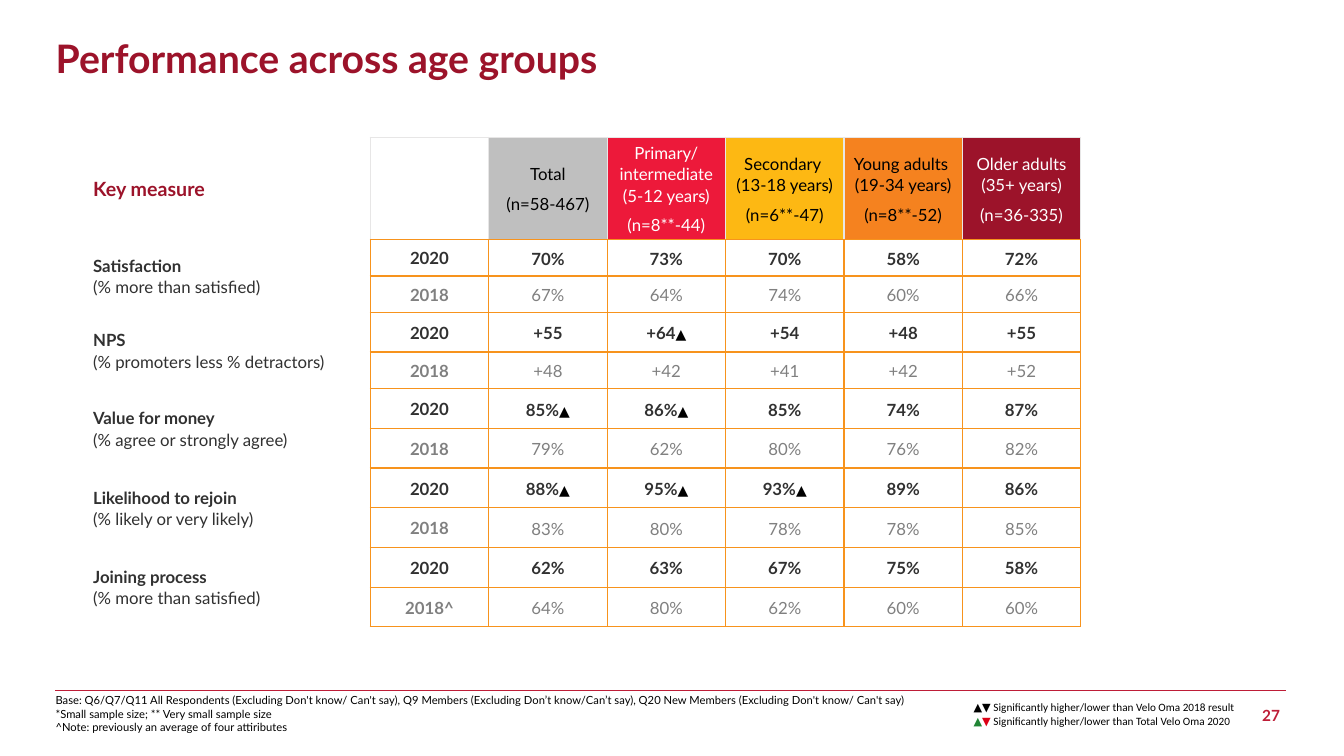
from copy import deepcopy
from dataclasses import dataclass
from typing import Optional

from lxml import etree
from pptx import Presentation
from pptx.dml.color import RGBColor
from pptx.enum.shapes import MSO_CONNECTOR, MSO_SHAPE
from pptx.enum.text import MSO_ANCHOR, PP_ALIGN
from pptx.oxml.ns import qn
from pptx.util import Pt

LEFT, CENTER, RIGHT = PP_ALIGN.LEFT, PP_ALIGN.CENTER, PP_ALIGN.RIGHT
MIDDLE, BOTTOM = MSO_ANCHOR.MIDDLE, MSO_ANCHOR.BOTTOM
LINE, RECT = MSO_CONNECTOR.STRAIGHT, MSO_SHAPE.RECTANGLE

BLACK = RGBColor(0x00, 0x00, 0x00)
WHITE = RGBColor(0xFF, 0xFF, 0xFF)
DARK = RGBColor(0x31, 0x31, 0x31)
GRAY = RGBColor(0x80, 0x80, 0x80)
SILVER = RGBColor(0xBF, 0xBF, 0xBF)
PALE = RGBColor(0xE7, 0xE6, 0xE6)
WINE = RGBColor(0x9C, 0x13, 0x2A)
RED = RGBColor(0xED, 0x19, 0x3A)
ROSE = RGBColor(0xBE, 0x1D, 0x37)
GOLD = RGBColor(0xFD, 0xB8, 0x13)
AMBER = RGBColor(0xF5, 0x82, 0x1F)
ORANGE = RGBColor(0xF7, 0x93, 0x1D)
GREEN = RGBColor(0x21, 0x85, 0x35)
SCARLET = RGBColor(0xDC, 0x00, 0x15)


@dataclass
class Span:
    text: str
    color: Optional[RGBColor] = None
    bold: Optional[bool] = None
    size: Optional[float] = None


@dataclass
class Group:
    name: str
    base: str
    fill: RGBColor
    color: RGBColor


@dataclass
class Measure:
    name: str
    note: str
    now: list[str]
    past: list[str]
    mark: str = ""


GROUPS = [
    Group("Total", "(n=58-467)", SILVER, BLACK),
    Group("Primary/ intermediate\n(5-12 years)", "(n=8**-44)", RED, WHITE),
    Group("Secondary \n(13-18 years)", "(n=6**-47)", GOLD, BLACK),
    Group("Young adults \n(19-34 years)", "(n=8**-52)", AMBER, BLACK),
    Group("Older adults\n(35+ years)", "(n=36-335)", WINE, WHITE),
]
MEASURES = [
    Measure("Satisfaction", "(% more than satisfied)",
            ["70%", "73%", "70%", "58%", "72%"], ["67%", "64%", "74%", "60%", "66%"]),
    Measure("NPS", "(% promoters less % detractors)",
            ["+55", "+64▲", "+54", "+48", "+55"], ["+48", "+42", "+41", "+42", "+52"]),
    Measure("Value for money", "(% agree or strongly agree)",
            ["85%▲", "86%▲", "85%", "74%", "87%"], ["79%", "62%", "80%", "76%", "82%"]),
    Measure("Likelihood to rejoin", "(% likely or very likely)",
            ["88%▲", "95%▲", "93%▲", "89%", "86%"], ["83%", "80%", "78%", "78%", "85%"]),
    Measure("Joining process", "(% more than satisfied)",
            ["62%", "63%", "67%", "75%", "58%"], ["64%", "80%", "62%", "60%", "60%"], "^"),
]
HEAD = 72.8
ROWS = [26.1, 26.1, 28.3, 26.1] + [28.4] * 6


def write(frame, paras: list[list[Span]], size: float = 12, color: RGBColor = BLACK,
          bold: bool = False, font: str = "Lato", align=LEFT,
          space: float = 1, gap: float = 0) -> None:
    """Fill a text frame, one list of spans for each paragraph."""
    for i, spans in enumerate(paras):
        para = frame.paragraphs[0] if i == 0 else frame.add_paragraph()
        para.alignment, para.line_spacing = align, space
        para.space_before = Pt(gap if i else 0)
        for span in spans:
            for j, part in enumerate(span.text.split("\n")):
                if j:
                    para.add_line_break()
                    para._p[-1].append(deepcopy(run._r.rPr))
                if not part:
                    continue
                run = para.add_run()
                run.text = part
                run.font.name = font
                run.font.size = Pt(span.size or size)
                run.font.bold = bold if span.bold is None else span.bold
                run.font.color.rgb = span.color or color


def edge(cell, **sides: Optional[RGBColor]) -> None:
    """Set the borders of a cell; a side left out has no line."""
    props = cell._tc.get_or_add_tcPr()
    for side in "LRTB":
        line = etree.SubElement(props, qn(f"a:ln{side}"), w=str(Pt(1)))
        color = sides.get(side)
        if color is None:
            etree.SubElement(line, qn("a:noFill"))
        else:
            solid = etree.SubElement(line, qn("a:solidFill"))
            etree.SubElement(solid, qn("a:srgbClr"), val=str(color))


def fit(cell, pad: float, low: float) -> None:
    """Set the cell's margins and its vertical anchor."""
    cell.margin_left = cell.margin_right = cell.margin_top = Pt(pad)
    cell.margin_bottom = Pt(low)
    cell.vertical_anchor = MIDDLE


def fill(cell, paras: list[list[Span]], pad: float = 2.9, low: float = 2.9, **form) -> None:
    """Write a table cell."""
    fit(cell, pad, low)
    write(cell.text_frame, paras, space=1.06, gap=6, **form)


def box(slide, left: float, top: float, width: float, height: float,
        paras: list[list[Span]], pad: Optional[float] = None, **form) -> None:
    """Place a text box."""
    frame = slide.shapes.add_textbox(Pt(left), Pt(top), Pt(width), Pt(height)).text_frame
    frame.word_wrap = True
    if pad is not None:
        frame.margin_left = frame.margin_right = Pt(pad)
        frame.margin_top = frame.margin_bottom = Pt(pad)
    write(frame, paras, **form)


def grid(slide) -> None:
    """Draw the table of measures by age group."""
    table = slide.shapes.add_table(
        len(ROWS) + 1, len(GROUPS) + 2, Pt(63.6), Pt(98.2),
        Pt(200.9 + 84.6 * 6), Pt(HEAD + sum(ROWS))).table
    table.first_row = table.horz_banding = False
    for col, width in zip(table.columns, [200.9] + [84.6] * 6):
        col.width = Pt(width)
    for row, height in zip(table.rows, [HEAD] + ROWS):
        row.height = Pt(height)

    # Borders
    for r in range(len(table.rows)):
        for c in range(len(table.columns)):
            cell = table.cell(r, c)
            tone = ORANGE if r else PALE
            if c:
                edge(cell, L=tone, R=tone, T=tone, B=ORANGE)
            else:
                edge(cell, R=tone)
            cell.fill.background()

    # Header
    fill(table.cell(0, 0), [[Span("Key measure")]], size=14, color=WINE, bold=True)
    for c, group in enumerate(GROUPS, 2):
        cell = table.cell(0, c)
        cell.fill.solid()
        cell.fill.fore_color.rgb = group.fill
        fill(cell, [[Span(group.name)], [Span(group.base)]], color=group.color, align=CENTER)

    # Two rows for each measure
    for m, item in enumerate(MEASURES):
        r = 2 * m + 1
        name = table.cell(r, 0)
        name.merge(table.cell(r + 1, 0))
        fit(table.cell(r + 1, 0), 0, 0)
        fill(name, [[Span(item.name + "\n", bold=True), Span(item.note)]], color=DARK)
        years = [("2020", item.now, DARK, True), ("2018" + item.mark, item.past, GRAY, False)]
        for k, (year, values, color, bold) in enumerate(years):
            fill(table.cell(r + k, 1), [[Span(year)]], color=color, bold=True, align=CENTER)
            for c, value in enumerate(values, 2):
                spans = [Span(value.rstrip("▲"))]
                if value.endswith("▲"):
                    spans.append(Span("▲", BLACK, False, 10))
                fill(table.cell(r + k, c), [spans], pad=0.7, low=0,
                     color=color, bold=bold, align=CENTER)


def main() -> None:
    deck = Presentation()
    deck.slide_width, deck.slide_height = Pt(960), Pt(540)
    slide = deck.slides.add_slide(deck.slide_layouts[5])

    # Title
    title = slide.shapes.title
    title.left, title.top, title.width, title.height = Pt(32.6), Pt(14), Pt(845.3), Pt(59)
    title.text_frame.vertical_anchor = MIDDLE
    write(title.text_frame, [[Span("Performance across age groups")]],
          size=28, color=WINE, bold=True, space=0.9)

    # Page number and footer rule
    box(slide, 747.4, 501.8, 169.9, 18.7, [[Span("27")]], pad=2.9,
        size=11, color=ROSE, bold=True, align=RIGHT)
    rule = slide.shapes.add_connector(LINE, Pt(39.6), Pt(493.2), Pt(918.7), Pt(493.2))
    rule.line.color.rgb, rule.line.width = ROSE, Pt(1)
    etree.SubElement(rule._element.spPr, qn("a:effectLst"))

    grid(slide)

    # Base notes
    base = slide.shapes.add_shape(RECT, Pt(32.6), Pt(497.5), Pt(709.9), Pt(30.2))
    base.shadow.inherit = False
    base.fill.solid()
    base.fill.fore_color.rgb = WHITE
    base.line.fill.background()
    base.text_frame.word_wrap = True
    base.text_frame.vertical_anchor = BOTTOM
    write(base.text_frame, [
        [Span("Base: Q6/Q7/Q11 All Respondents (Excluding Don't know/ Can't say), "
              "Q9 Members (Excluding Don’t know/Can’t say), "
              "Q20 New Members (Excluding Don't know/ Can't say)")],
        [Span("*Small sample size; ** Very small sample size")],
        [Span("^Note: previously an average of four attiributes")],
    ], size=8)

    # Legend
    box(slide, 688.3, 496.8, 220.3, 26.6, [
        [Span("▲▼ Significantly higher/lower than Velo Oma 2018 result")],
        [Span("▲", GREEN), Span("▼", SCARLET),
         Span(" Significantly higher/lower than Total Velo Oma 2020")],
    ], size=8, font="Calibri")

    deck.save("out.pptx")


if __name__ == "__main__":
    main()
